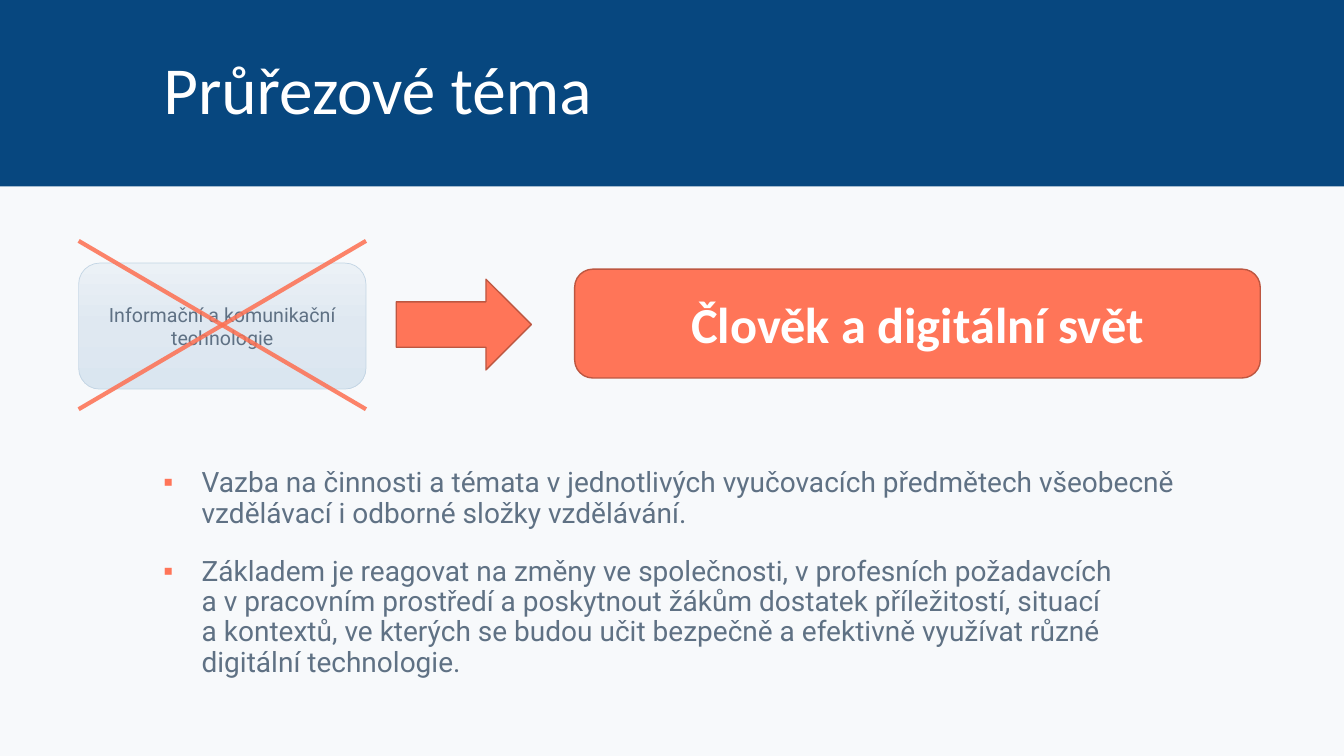
from copy import deepcopy
from lxml.etree import SubElement
from pptx import Presentation
from pptx.dml.color import RGBColor
from pptx.enum.shapes import MSO_CONNECTOR, MSO_SHAPE
from pptx.enum.text import MSO_ANCHOR, MSO_AUTO_SIZE, PP_ALIGN
from pptx.oxml.ns import qn
from pptx.util import Inches, Pt

COLORS = {
    "page": "F7F9FB", "band": "07477F", "white": "FFFFFF", "text": "5F7184",
    "coral": "FF7558", "coral_edge": "BD5741", "cross": "FD7052", "old_edge": "C3D5E4",
    "old_top": "EBF1F6", "old_middle": "DFE8F1", "old_bottom": "DAE6F0",
}
OLD_GRADIENT = [(0, "old_top"), (0.5, "old_middle"), (1, "old_bottom")]
TITLE = {"name": "Calibri", "size": Pt(48), "bold": False}
BODY = {"name": "Roboto", "size": Pt(20)}
OLD_TOPIC = {"name": "Roboto", "size": Pt(14)}
NEW_TOPIC = {"name": "Calibri", "size": Pt(36), "bold": True}
POINTS = [
    "Vazba na činnosti a témata v jednotlivých vyučovacích předmětech všeobecně "
    "vzdělávací i odborné složky vzdělávání.",
    "Základem je reagovat na změny ve společnosti, v profesních požadavcích\n"
    "a v pracovním prostředí a poskytnout žákům dostatek příležitostí, situací\n"
    "a kontextů, ve kterých se budou učit bezpečně a efektivně využívat různé "
    "digitální technologie.",
]


def rgb(key):
    return RGBColor.from_string(COLORS[key])


def apply(target, values):
    for name, value in values.items():
        setattr(target, name, value)


class SlideBuilder:
    """Adds styled elements to the current slide."""

    def __init__(self, prs):
        self.s = prs.slides.add_slide(prs.slide_layouts[0])
        self.s.background.fill.solid()
        self.s.background.fill.fore_color.rgb = rgb("page")

    def set_text(self, p, text, font, color, align, **spacing):
        p.text = text
        apply(p, {"alignment": align, **spacing})
        for r in p.runs:
            apply(r.font, font)
            r.font.color.rgb = rgb(color)
        for br in p._p.findall(qn("a:br")):
            br.insert(0, deepcopy(p.runs[0]._r.rPr))

    def placeholder(self, idx, box, anchor):
        sp = self.s.placeholders[idx]
        apply(sp, dict(zip(("left", "top", "width", "height"), map(Inches, box))))
        tf = sp.text_frame
        apply(tf, {"word_wrap": True, "auto_size": MSO_AUTO_SIZE.NONE, "vertical_anchor": anchor})
        return tf

    def title(self, text, box):
        tf = self.placeholder(0, box, MSO_ANCHOR.MIDDLE)
        self.set_text(tf.paragraphs[0], text, TITLE, "white", PP_ALIGN.LEFT, line_spacing=0.9)

    def bullets(self, items, box):
        tf = self.placeholder(1, box, MSO_ANCHOR.TOP)
        for i, item in enumerate(items):
            p = tf.add_paragraph() if i else tf.paragraphs[0]
            self.set_text(p, item, BODY, "text", PP_ALIGN.LEFT, line_spacing=0.9,
                          space_before=Pt(10), space_after=Pt(10))
            pPr = p._p.get_or_add_pPr()
            pPr.set("marL", str(Inches(0.38)))
            pPr.set("indent", str(-Inches(0.38)))
            SubElement(SubElement(pPr, qn("a:buClr")), qn("a:srgbClr"), val=COLORS["coral"])
            SubElement(pPr, qn("a:buFont"), typeface="Arial")
            SubElement(pPr, qn("a:buChar"), char="▪")

    def shape(self, kind, box, fill, line=None, weight=1):
        sp = self.s.shapes.add_shape(kind, *map(Inches, box))
        sp.shadow.inherit = False
        if isinstance(fill, list):
            self.gradient(sp.fill, fill)
        else:
            sp.fill.solid()
            sp.fill.fore_color.rgb = rgb(fill)
        if line:
            sp.line.color.rgb = rgb(line)
            sp.line.width = Pt(weight)
        else:
            sp.line.fill.background()
        return sp

    def gradient(self, fill, stops):
        fill.gradient()
        fill.gradient_angle = 270
        gs_list = fill._fill._gradFill.gsLst
        gs_list.append(deepcopy(gs_list[-1]))
        for stop, (position, color) in zip(fill.gradient_stops, stops):
            stop.position = position
            stop.color.rgb = rgb(color)

    def band(self, box):
        sp = self.shape(MSO_SHAPE.RECTANGLE, box, "band")
        self.s.shapes._spTree.insert(2, sp._element)

    def topic(self, text, box, fill, line, weight, font, color):
        sp = self.shape(MSO_SHAPE.ROUNDED_RECTANGLE, box, fill, line, weight)
        apply(sp.text_frame, {"word_wrap": True, "vertical_anchor": MSO_ANCHOR.MIDDLE})
        self.set_text(sp.text_frame.paragraphs[0], text, font, color, PP_ALIGN.CENTER)

    def cross(self, left, top, right, bottom):
        for x1, x2 in ((left, right), (right, left)):
            c = self.s.shapes.add_connector(
                MSO_CONNECTOR.STRAIGHT, *map(Inches, (x1, bottom, x2, top)))
            c.line.color.rgb = rgb("cross")
            c.line.width = Pt(3)
            color = c._element.spPr.find(".//" + qn("a:srgbClr"))
            SubElement(color, qn("a:alpha"), val="85000")
            SubElement(c._element.spPr, qn("a:effectLst"))


def main():
    prs = Presentation()
    apply(prs, {"slide_width": Inches(13.33), "slide_height": Inches(7.5)})
    b = SlideBuilder(prs)
    b.band((0, 0, 13.33, 1.85))
    b.title("Průřezové téma", (1.52, 0.12, 10.15, 1.6))
    b.bullets(POINTS, (1.52, 4.6, 10.39, 2.59))
    b.topic("Informační a komunikační technologie", (0.78, 2.61, 2.85, 1.25),
            OLD_GRADIENT, "old_edge", 0.5, OLD_TOPIC, "text")
    b.cross(0.78, 2.39, 3.63, 4.06)
    b.topic("Člověk a digitální svět", (5.7, 2.67, 6.8, 1.08),
            "coral", "coral_edge", 1, NEW_TOPIC, "white")
    b.shape(MSO_SHAPE.RIGHT_ARROW, (3.93, 2.77, 1.34, 0.9), "coral", "coral_edge")
    prs.save("out.pptx")


if __name__ == "__main__":
    main()
